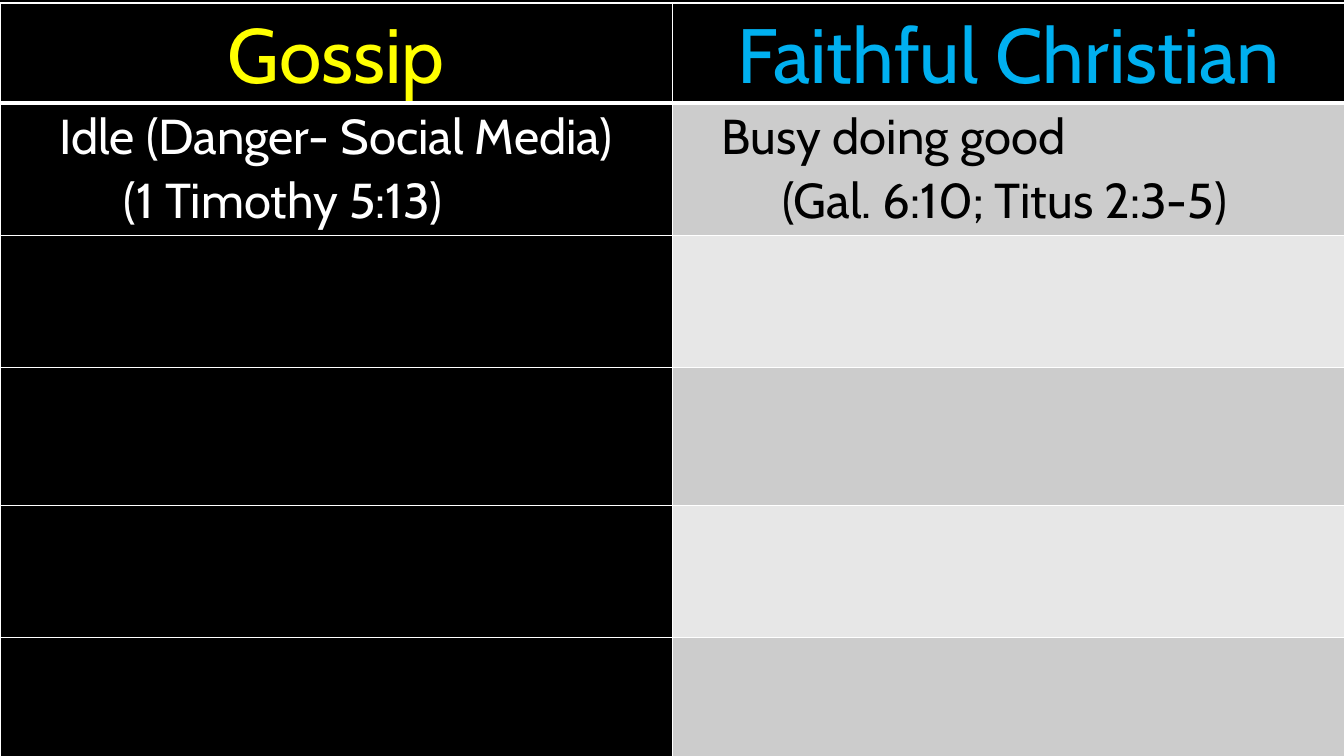
from lxml import etree
from pptx import Presentation
from pptx.dml.color import RGBColor
from pptx.enum.text import PP_ALIGN
from pptx.oxml.ns import qn
from pptx.util import Inches, Pt

CENTER = PP_ALIGN.CENTER
LEFT = PP_ALIGN.LEFT

BLACK = RGBColor(0x00, 0x00, 0x00)
WHITE = RGBColor(0xFF, 0xFF, 0xFF)
YELLOW = RGBColor(0xFF, 0xFF, 0x00)
BLUE = RGBColor(0x00, 0xB0, 0xF0)
DARK_BAND = RGBColor(0xCC, 0xCC, 0xCC)
LIGHT_BAND = RGBColor(0xE7, 0xE7, 0xE7)

FONT = "Cabin"
COLUMN_WIDTH = 6.67
ROW_HEIGHTS = [0.96, 1.31, 1.31, 1.37, 1.31, 1.41]


def write(para, text, *, size, color, align=CENTER, indent=0):
    """Fill a paragraph with one formatted span."""
    para.alignment = align
    para.line_spacing = 1.07
    if indent:
        para._p.get_or_add_pPr().set("marL", str(Inches(indent)))
    span = para.add_run()
    span.text = text
    span.font.name = FONT
    span.font.size = Pt(size)
    span.font.color.rgb = color


class SlideBuilder:
    def __init__(self, deck, background):
        self.page = deck.slides.add_slide(deck.slide_layouts[6])
        self.page.background.fill.solid()
        self.page.background.fill.fore_color.rgb = background

    def table(self, left, top, column_widths, row_heights):
        frame = self.page.shapes.add_table(
            len(row_heights), len(column_widths), Inches(left), Inches(top),
            Inches(sum(column_widths)), Inches(sum(row_heights)))
        table = frame.table
        for column, width in zip(table.columns, column_widths):
            column.width = Inches(width)
        for row, height in zip(table.rows, row_heights):
            row.height = Inches(height)
        return table

    def cell(self, cell, fill, top=1, bottom=1):
        cell.fill.solid()
        cell.fill.fore_color.rgb = fill
        cell.margin_left = cell.margin_right = Inches(0.07)
        cell.margin_top = cell.margin_bottom = 0
        self.borders(cell, {"L": 1, "R": 1, "T": top, "B": bottom})

    def borders(self, cell, widths):
        properties = cell._tc.get_or_add_tcPr()
        for position, (side, width) in enumerate(widths.items()):
            line = etree.Element(qn(f"a:ln{side}"), w=str(Pt(width)))
            fill = etree.SubElement(line, qn("a:solidFill"))
            etree.SubElement(fill, qn("a:srgbClr"), val=str(WHITE))
            properties.insert(position, line)

    def lines(self, cell, lines, **style):
        frame = cell.text_frame
        for number, (text, layout) in enumerate(lines):
            para = frame.add_paragraph() if number else frame.paragraphs[0]
            write(para, text, **style, **layout)


def main():
    deck = Presentation()
    deck.slide_width = Inches(13.33)
    deck.slide_height = Inches(7.5)
    builder = SlideBuilder(deck, BLACK)

    # Grid: black left column, banded right column, heavy rule below the header
    table = builder.table(0, 0.03, [COLUMN_WIDTH] * 2, ROW_HEIGHTS)
    for row in range(len(ROW_HEIGHTS)):
        band = DARK_BAND if row % 2 else LIGHT_BAND
        for column, fill in enumerate([BLACK, band if row else BLACK]):
            builder.cell(table.cell(row, column), fill,
                         top=3 if row == 1 else 1, bottom=3 if row == 0 else 1)

    # Header
    builder.lines(table.cell(0, 0), [("Gossip", {})], size=55, color=YELLOW)
    builder.lines(table.cell(0, 1), [("Faithful Christian", {})], size=55, color=BLUE)

    # First comparison
    builder.lines(table.cell(1, 0), [
        ("Idle (Danger- Social Media)", {}),
        ("(1 Timothy 5:13)", {"align": LEFT, "indent": 1.16}),
    ], size=35, color=WHITE)
    builder.lines(table.cell(1, 1), [
        ("Busy doing good", {"align": LEFT, "indent": 0.42}),
        ("(Gal. 6:10; Titus 2:3-5)", {"align": LEFT, "indent": 1.02}),
    ], size=35, color=BLACK)

    deck.save("out.pptx")


if __name__ == "__main__":
    main()
